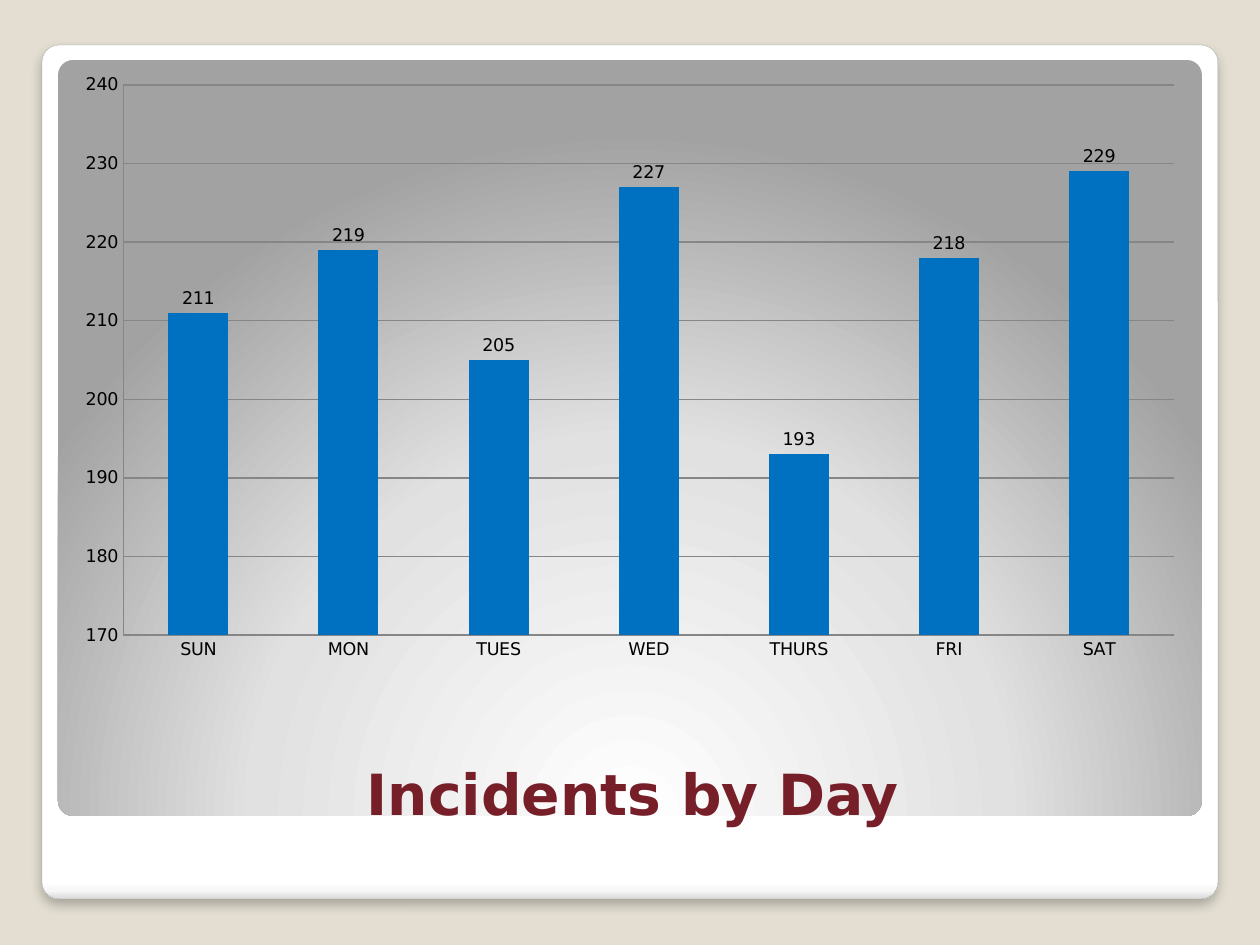
from lxml import etree
from pptx import Presentation
from pptx.chart.data import CategoryChartData
from pptx.dml.color import RGBColor
from pptx.enum.chart import XL_CHART_TYPE as CHART, XL_LABEL_POSITION as LABEL, XL_TICK_MARK as TICK
from pptx.enum.shapes import MSO_SHAPE as SHAPE
from pptx.enum.text import MSO_ANCHOR as ANCHOR, PP_ALIGN as ALIGN
from pptx.oxml import parse_xml
from pptx.oxml.ns import nsdecls, qn
from pptx.util import Emu, Pt

PX = 914400 // 126
FONT = "DejaVu Sans"
BEIGE = RGBColor(0xE3, 0xDE, 0xD1)
EDGE = RGBColor(0xA4, 0xA4, 0xA4)
GRID = RGBColor(0x86, 0x86, 0x86)
BLUE = RGBColor(0x00, 0x70, 0xC0)
MAROON = RGBColor(0x77, 0x1F, 0x28)
BLACK = RGBColor(0x00, 0x00, 0x00)

FRAME_STOPS = [(0, "FFFFFF"), (98, "FFFFFF"), (99, "F7F7F7"), (100, "DADADA")]
PANEL_STOPS = [(0, "FFFFFF"), (55, "E1E1E1"), (100, "A2A2A2")]
DOWNWARD = '<a:lin ang="5400000" scaled="0"/>'
FROM_BELOW = ('<a:path path="circle"><a:fillToRect l="50000" t="175000" '
              'r="50000" b="-75000"/></a:path>')

INCIDENTS = {"SUN": 211, "MON": 219, "TUES": 205, "WED": 227,
             "THURS": 193, "FRI": 218, "SAT": 229}


def px(*lengths):
    return [Emu(n * PX) for n in lengths]


def set_attrs(obj, values):
    for name, value in values.items():
        setattr(obj, name, value)


def style_font(font, size, color, bold=False):
    set_attrs(font, {"name": FONT, "size": Pt(size), "bold": bold})
    font.color.rgb = color


def set_gradient(sp, stops, direction):
    gs = "".join(f'<a:gs pos="{pos * 1000}"><a:srgbClr val="{color}"/></a:gs>'
                 for pos, color in stops)
    grad = parse_xml(f'<a:gradFill {nsdecls("a")} rotWithShape="1">'
                     f'<a:gsLst>{gs}</a:gsLst>{direction}</a:gradFill>')
    sp._element.spPr.find(qn("a:prstGeom")).addnext(grad)


def add_shadow(sp, blur, distance, alpha):
    """Drop a black shadow straight down; lengths in points, alpha in percent."""
    effects = sp._element.spPr.find(qn("a:effectLst"))
    shadow = etree.SubElement(effects, qn("a:outerShdw"), blurRad=str(Pt(blur)),
                              dist=str(Pt(distance)), dir="5400000",
                              algn="t", rotWithShape="0")
    color = etree.SubElement(shadow, qn("a:srgbClr"), val="000000")
    etree.SubElement(color, qn("a:alpha"), val=str(alpha * 1000))


def add_rounded_panel(slide, box, stops, direction):
    sp = slide.shapes.add_shape(SHAPE.ROUNDED_RECTANGLE, *px(*box))
    sp.adjustments[0] = 0.02
    sp.shadow.inherit = False
    sp.line.fill.background()
    set_gradient(sp, stops, direction)
    return sp


def add_title(slide, box, text):
    tf = slide.shapes.add_textbox(*px(*box)).text_frame
    set_attrs(tf, {"word_wrap": True, "vertical_anchor": ANCHOR.BOTTOM})
    p = tf.paragraphs[0]
    p.alignment = ALIGN.CENTER
    r = p.add_run()
    r.text = text
    style_font(r.font, 32.4, MAROON, bold=True)


def style_axes(chart):
    ticks = {"major_tick_mark": TICK.NONE, "minor_tick_mark": TICK.NONE}
    scale = {"minimum_scale": 170, "maximum_scale": 240, "major_unit": 10,
             "has_major_gridlines": True}
    set_attrs(chart.category_axis, ticks)
    set_attrs(chart.value_axis, ticks | scale)
    for part in (chart.category_axis, chart.value_axis, chart.value_axis.major_gridlines):
        part.format.line.color.rgb = GRID
        part.format.line.width = Pt(0.75)


def add_column_chart(slide, box, values):
    data = CategoryChartData(number_format="General")
    data.categories = list(values)
    data.add_series("Series 1", list(values.values()))
    chart = slide.shapes.add_chart(CHART.COLUMN_CLUSTERED, *px(*box), data).chart
    set_attrs(chart, {"has_legend": False, "has_title": False})
    style_font(chart.font, 10, BLACK)
    style_axes(chart)
    plot = chart.plots[0]
    set_attrs(plot, {"gap_width": 150, "vary_by_categories": False, "has_data_labels": True})
    set_attrs(plot.data_labels, {"show_value": True, "position": LABEL.OUTSIDE_END})
    fill = plot.series[0].format.fill
    fill.solid()
    fill.fore_color.rgb = BLUE


def main():
    prs = Presentation()
    prs.slide_width, prs.slide_height = px(1260, 945)
    slide = prs.slides.add_slide(prs.slide_layouts[6])
    slide.background.fill.solid()
    slide.background.fill.fore_color.rgb = BEIGE

    frame = add_rounded_panel(slide, (42, 45, 1176, 854), FRAME_STOPS, DOWNWARD)
    frame.line.color.rgb = EDGE
    frame.line.width = Pt(0.16)
    add_shadow(frame, blur=6, distance=4, alpha=25)
    add_rounded_panel(slide, (58, 60, 1144, 756), PANEL_STOPS, FROM_BELOW)

    add_title(slide, (69, 746, 1128, 87), "Incidents by Day")
    add_column_chart(slide, (63, 63, 1134, 609), INCIDENTS)
    prs.save("out.pptx")


if __name__ == "__main__":
    main()
